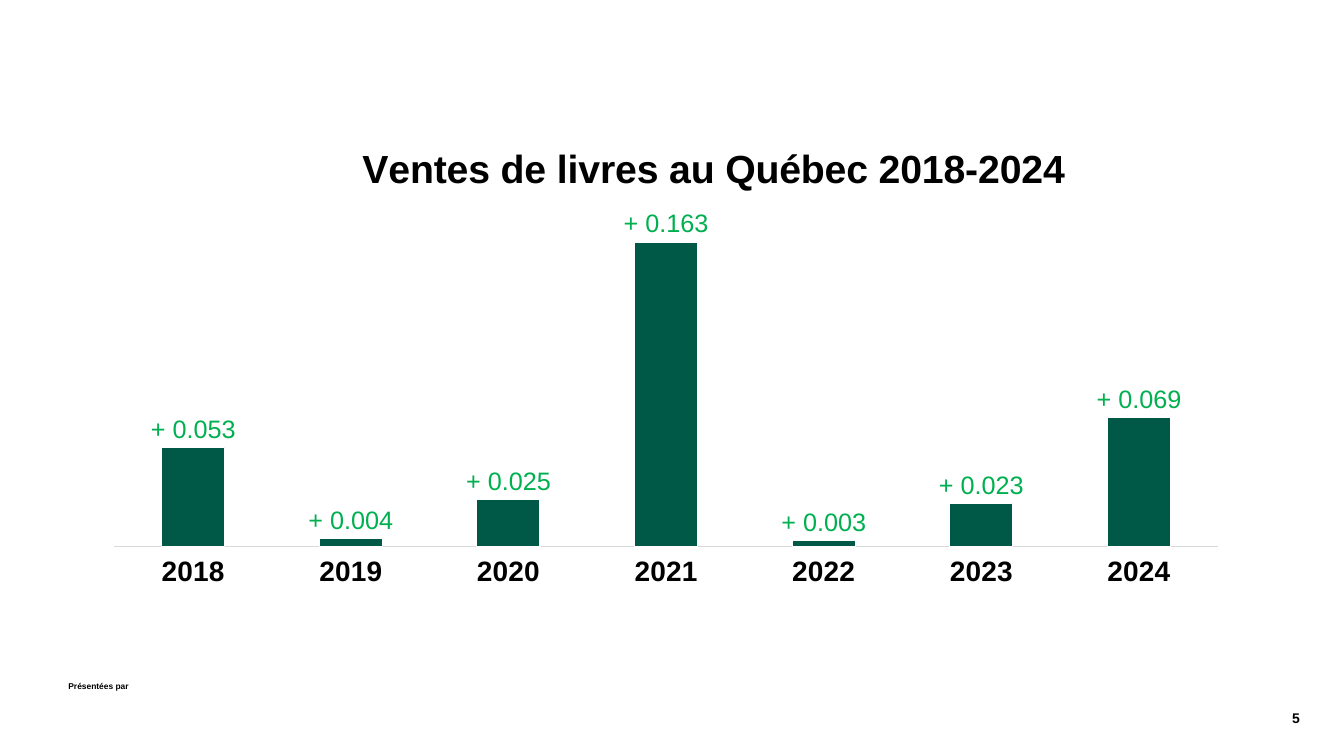
from dataclasses import dataclass

from lxml import etree
from pptx import Presentation
from pptx.chart.data import CategoryChartData
from pptx.dml.color import RGBColor
from pptx.enum.chart import XL_CHART_TYPE, XL_LABEL_POSITION, XL_TICK_LABEL_POSITION, XL_TICK_MARK
from pptx.enum.text import PP_ALIGN
from pptx.oxml.ns import qn
from pptx.util import Inches, Pt


@dataclass(frozen=True)
class Theme:
    font: str = "Arial"
    ink: str = "000000"
    paper: str = "FFFFFF"
    bar: str = "005847"
    growth: str = "00B050"
    axis: str = "D9D9D9"
    title_size: float = 28
    category_size: float = 20
    label_size: float = 18
    number_size: float = 10
    credit_size: float = 6


SALES_GROWTH = {
    "2018": 0.053,
    "2019": 0.004,
    "2020": 0.025,
    "2021": 0.163,
    "2022": 0.003,
    "2023": 0.023,
    "2024": 0.069,
}


def style_font(font, theme, size, color, bold=True):
    font.name = theme.font
    font.size = Pt(size)
    font.bold = bold
    font.color.rgb = RGBColor.from_string(color)


def write_text(text_frame, text, *, theme, size, color, align=PP_ALIGN.LEFT):
    paragraph = text_frame.paragraphs[0]
    paragraph.alignment = align
    run = paragraph.add_run()
    run.text = text
    style_font(run.font, theme, size, color)


def set_layout(parent, position, **values):
    """Place a chart part by fractions of the chart area."""
    for old_layout in parent.findall(qn("c:layout")):
        parent.remove(old_layout)
    layout = etree.Element(qn("c:layout"))
    manual = etree.SubElement(layout, qn("c:manualLayout"))
    for name, value in values.items():
        etree.SubElement(manual, qn(f"c:{name}")).set("val", str(value))
    parent.insert(position, layout)


class SlideBuilder:
    def __init__(self, slide, theme):
        self.slide = slide
        self.theme = theme

    def text(self, text, left, top, width, height, *, size, wrap=True, align=PP_ALIGN.LEFT):
        shape = self.slide.shapes.add_textbox(
            Inches(left), Inches(top), Inches(width), Inches(height))
        shape.text_frame.word_wrap = wrap
        write_text(shape.text_frame, text, theme=self.theme, size=size,
                   color=self.theme.ink, align=align)

    def column_chart(self, title, values, left, top, width, height):
        theme = self.theme
        data = CategoryChartData()
        data.categories = list(values)
        data.add_series("Series 1", list(values.values()))
        chart = self.slide.shapes.add_chart(
            XL_CHART_TYPE.COLUMN_CLUSTERED, Inches(left), Inches(top),
            Inches(width), Inches(height), data).chart
        chart.has_legend = False
        style_font(chart.font, theme, theme.number_size, theme.ink)

        # Title
        chart.has_title = True
        write_text(chart.chart_title.text_frame, title, theme=theme,
                   size=theme.title_size, color=theme.ink, align=PP_ALIGN.CENTER)
        chart_title = chart.chart_title._element
        set_layout(chart_title, 1, xMode="edge", yMode="edge", x=0.25, y=0.04)

        # Axes
        categories = chart.category_axis
        categories.major_tick_mark = XL_TICK_MARK.NONE
        categories.tick_label_position = XL_TICK_LABEL_POSITION.LOW
        categories.format.line.color.rgb = RGBColor.from_string(theme.axis)
        categories.format.line.width = Pt(0.75)
        style_font(categories.tick_labels.font, theme, theme.category_size, theme.ink)
        growth = chart.value_axis
        growth.minimum_scale, growth.maximum_scale = 0, 0.18
        growth.has_major_gridlines = False
        growth.tick_labels.number_format = "0.0%"
        growth.tick_labels.number_format_is_linked = False
        growth.visible = False

        # Columns and their labels
        plot = chart.plots[0]
        plot.gap_width = 150
        plot.vary_by_categories = False
        series = plot.series[0]
        series.format.fill.solid()
        series.format.fill.fore_color.rgb = RGBColor.from_string(theme.bar)
        series.format.line.color.rgb = RGBColor.from_string(theme.paper)
        series.format.line.width = Pt(0.75)
        labels = series.data_labels
        labels.show_value = True
        labels.position = XL_LABEL_POSITION.OUTSIDE_END
        labels.number_format = '"+ "0.000'
        labels.number_format_is_linked = False
        style_font(labels.font, theme, theme.label_size, theme.growth, bold=False)

        plot_area = chart._chartSpace.chart.plotArea
        set_layout(plot_area, 0, layoutTarget="inner", xMode="edge", yMode="edge",
                   x=0.06, y=0.18, w=0.87, h=0.64)


def main():
    presentation = Presentation()
    presentation.slide_width = Inches(13.33)
    presentation.slide_height = Inches(7.5)
    theme = Theme()
    builder = SlideBuilder(presentation.slides.add_slide(presentation.slide_layouts[6]), theme)

    # Footer
    builder.text("Présentées par", 0.58, 6.71, 0.81, 0.2, size=theme.credit_size, wrap=False)
    builder.text("5", 10.73, 6.99, 2.26, 0.27, size=theme.number_size, align=PP_ALIGN.RIGHT)

    # Sales growth by year
    builder.column_chart("Ventes de livres au Québec 2018-2024", SALES_GROWTH,
                         0.38, 1.15, 12.58, 5.21)

    presentation.save("out.pptx")


if __name__ == "__main__":
    main()
